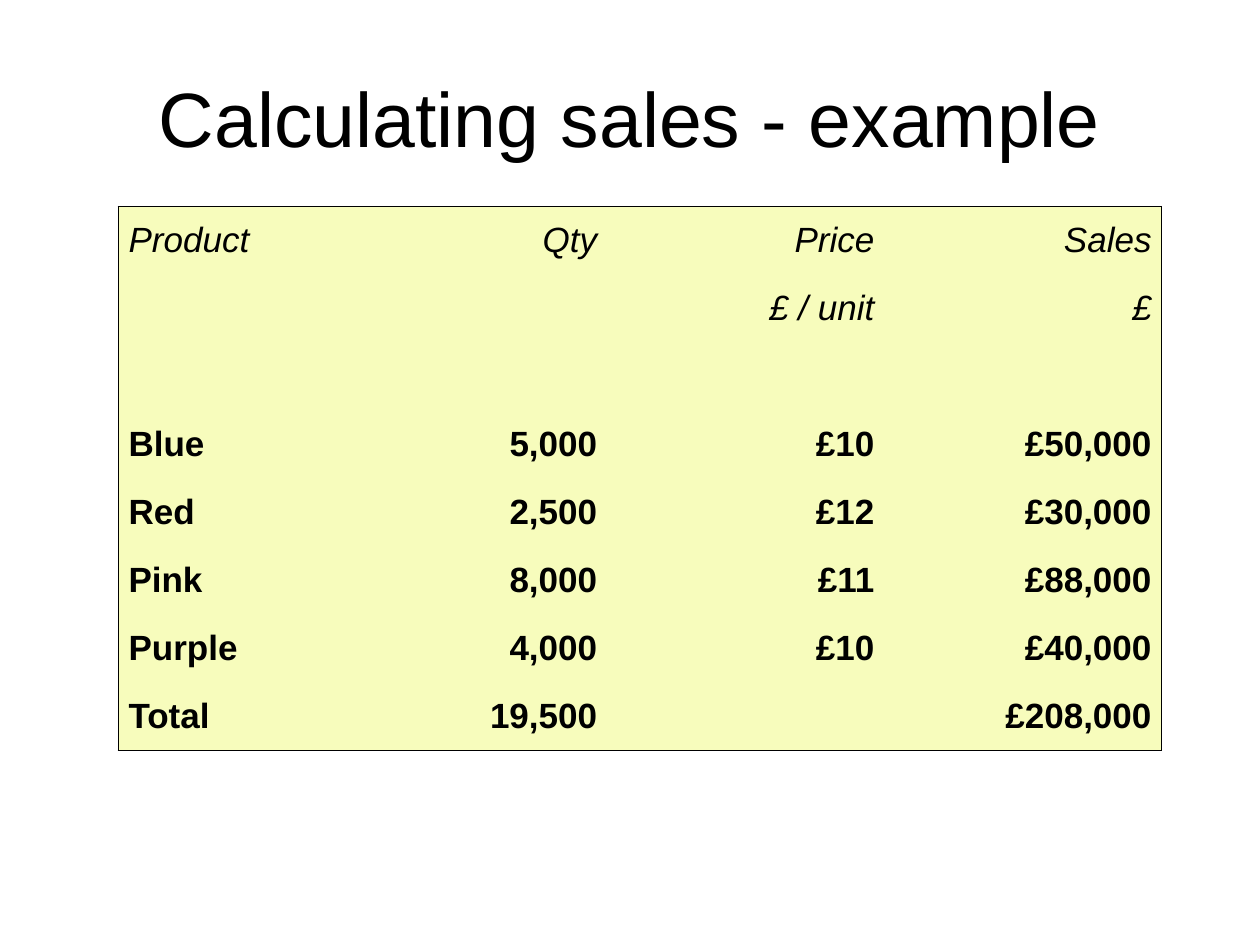
from dataclasses import dataclass

from lxml import etree
from pptx import Presentation
from pptx import util as u
from pptx.dml import color
from pptx.enum import text
from pptx.oxml import ns


@dataclass(frozen=True)
class Theme:
    font: str = "Arial"
    ink: str = "000000"
    fill: str = "F7FCBC"
    head: int = 44
    body: int = 20
    line: int = 1
    pad: float = 0.08


THEME = Theme()
WIDE, HIGH = 10, 7.5
LEFT, TOP = 0.94, 1.64
COLS = [1.69, 2.19, 2.2, 2.2]
STEP = 0.54
HEADS = 3  # rows set in italics

ROWS = [
    ["Product", "Qty", "Price", "Sales"],
    ["", "", "£ / unit", "£"],
    ["", "", "", ""],
    ["Blue", "5,000", "£10", "£50,000"],
    ["Red", "2,500", "£12", "£30,000"],
    ["Pink", "8,000", "£11", "£88,000"],
    ["Purple", "4,000", "£10", "£40,000"],
    ["Total", "19,500", "", "£208,000"],
]


def write(frame, words, size=THEME.body, align="LEFT", bold=False, ital=False):
    """Put one formatted line of text in a frame."""
    para = frame.paragraphs[0]
    para.alignment = getattr(text.PP_ALIGN, align)
    run = para.add_run()
    run.text = words
    font = run.font
    font.name, font.size = THEME.font, u.Pt(size)
    font.bold, font.italic = bold, ital
    font.color.rgb = color.RGBColor.from_string(THEME.ink)


def title(slide, words):
    box = slide.shapes.add_textbox(
        *map(u.Inches, (WIDE * 0.05, HIGH * 0.04, WIDE * 0.9, HIGH / 6)))
    frame = box.text_frame
    frame.word_wrap = True
    frame.vertical_anchor = text.MSO_ANCHOR.MIDDLE
    write(frame, words, size=THEME.head, align="CENTER")


def edge(cell, sides):
    """Draw the named sides of a cell and clear the others."""
    props = cell._tc.get_or_add_tcPr()
    for spot, side in enumerate("LRTB"):
        line = etree.Element(ns.qn(f"a:ln{side}"), w=str(u.Pt(THEME.line)))
        if side in sides:
            fill = etree.SubElement(line, ns.qn("a:solidFill"))
            etree.SubElement(fill, ns.qn("a:srgbClr"), val=THEME.ink)
        else:
            etree.SubElement(line, ns.qn("a:noFill"))
        props.insert(spot, line)


def sides(row, col):
    """Name the sides of a cell that lie on the table's outer frame."""
    tests = {"L": col == 0, "R": col == len(COLS) - 1,
             "T": row == 0, "B": row == len(ROWS) - 1}
    return [side for side, outer in tests.items() if outer]


def grid(slide):
    size = sum(COLS), STEP * len(ROWS)
    table = slide.shapes.add_table(
        len(ROWS), len(COLS), *map(u.Inches, (LEFT, TOP, *size))).table
    table.first_row = table.horz_banding = False
    for col, wide in zip(table.columns, COLS):
        col.width = u.Inches(wide)
    for r, row in enumerate(ROWS):
        table.rows[r].height = u.Inches(STEP)
        for c, words in enumerate(row):
            cell = table.cell(r, c)
            cell.fill.solid()
            cell.fill.fore_color.rgb = color.RGBColor.from_string(THEME.fill)
            cell.vertical_anchor = text.MSO_ANCHOR.MIDDLE
            cell.margin_left = cell.margin_right = u.Inches(THEME.pad)
            cell.margin_top = cell.margin_bottom = u.Inches(THEME.pad)
            edge(cell, sides(r, c))
            if words:
                write(cell.text_frame, words, align="RIGHT" if c else "LEFT",
                      bold=r >= HEADS, ital=r < HEADS)


def main():
    deck = Presentation()
    deck.slide_width, deck.slide_height = u.Inches(WIDE), u.Inches(HIGH)
    slide = deck.slides.add_slide(deck.slide_layouts[6])
    # Heading
    title(slide, "Calculating sales - example")
    # Sales table
    grid(slide)
    deck.save("out.pptx")


if __name__ == "__main__":
    main()
